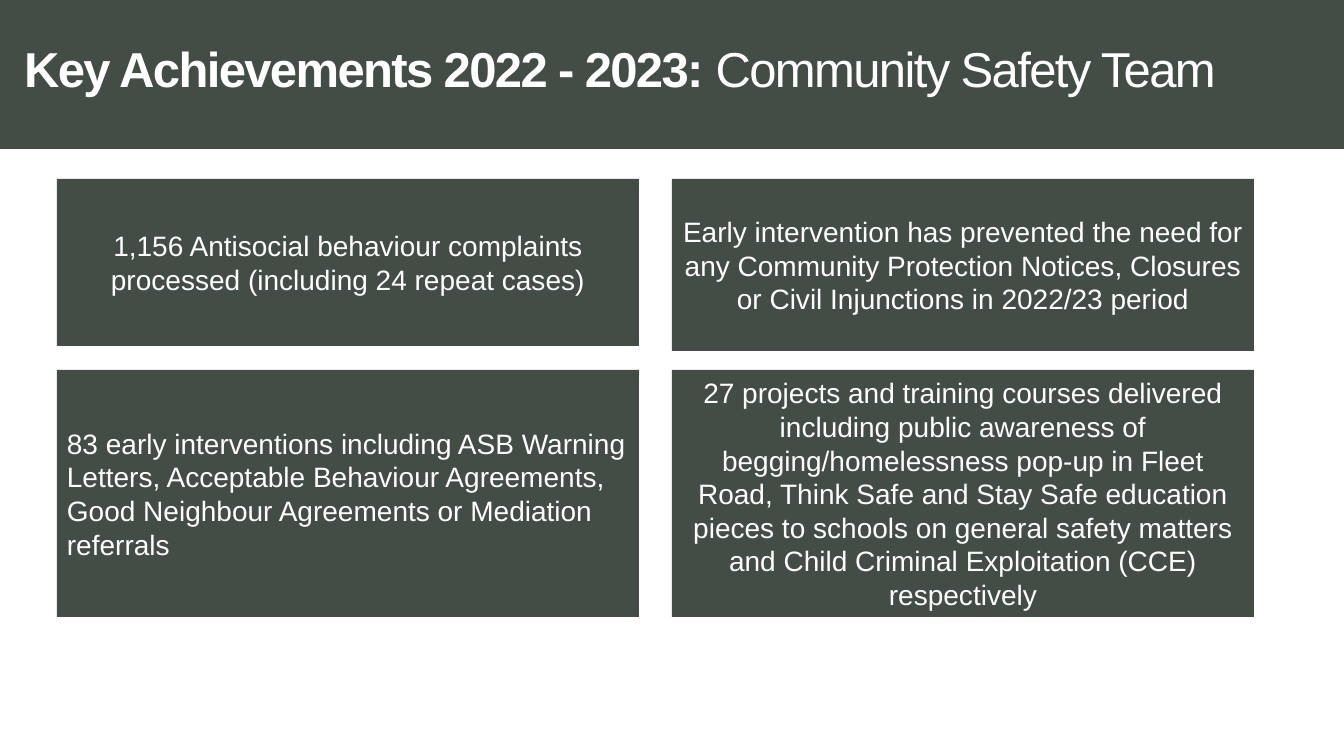
"""Build the Community Safety Team key achievements slide."""
from pptx import Presentation
from pptx.dml.color import RGBColor
from pptx.enum.shapes import MSO_SHAPE as Shape
from pptx.enum.text import MSO_ANCHOR as Anchor, MSO_AUTO_SIZE as AutoSize, PP_ALIGN as Align
from pptx.util import Pt

PX = 914400 / 100.8
WIDTH, HEIGHT = 1344, 756
GREEN, WHITE = "434D46", "FFFFFF"
TITLE_FONT = {"name": "Arial", "size": Pt(35)}
CARD_FONT = {"name": "Arial", "size": Pt(20)}

TITLE_SPANS = [
    ("Key Achievements 2022 - 2023: ", True),
    ("Community Safety Team", False),
]
COLUMN_WIDTH, COLUMN_GAP = 582, 33
CARD_ROWS = [
    (0, [
        (167, Align.CENTER,
         "1,156 Antisocial behaviour complaints processed "
         "(including 24 repeat cases)"),
        (172, Align.CENTER,
         "Early intervention has prevented the need for any Community "
         "Protection Notices, Closures or Civil Injunctions in 2022/23 period"),
    ]),
    (191, [
        (247, Align.LEFT,
         "83 early interventions including ASB Warning Letters, Acceptable "
         "Behaviour Agreements, Good Neighbour Agreements or Mediation referrals"),
        (247, Align.CENTER,
         "27 projects and training courses delivered including public awareness "
         "of begging/homelessness pop-up in Fleet Road, Think Safe and Stay Safe "
         "education pieces to schools on general safety matters and Child "
         "Criminal Exploitation (CCE) respectively"),
    ]),
]


def px(length):
    """Turn pixels into EMU."""
    return round(length * PX)


def color(code):
    """Turn a hex string into a colour."""
    return RGBColor.from_string(code)


def apply(target, values):
    """Set each named attribute on the target."""
    for name, value in values.items():
        setattr(target, name, value)


def add_span(para, text, font, bold=False):
    """Add a white run with the given font values."""
    span = para.add_run()
    span.text = text
    apply(span.font, {**font, "bold": bold})
    span.font.color.rgb = color(WHITE)
    return span


def add_panel(page, left, top, width, height):
    """Add a plain green rectangle."""
    panel = page.shapes.add_shape(Shape.RECTANGLE, px(left), px(top), px(width), px(height))
    panel.shadow.inherit = False
    panel.fill.solid()
    panel.fill.fore_color.rgb = color(GREEN)
    panel.line.fill.background()
    return panel


def add_header(page, left, top, width, height):
    """Fill the header band and set the title over it."""
    add_panel(page, left, top, width, height)
    title = page.shapes.title
    page.shapes._spTree.append(title._element)
    apply(title, {"left": px(left + 14), "top": px(top + 9),
                  "width": px(width - 22), "height": px(height - 22)})
    apply(title.text_frame, {"word_wrap": True, "auto_size": AutoSize.NONE,
                             "vertical_anchor": Anchor.MIDDLE})
    para = title.text_frame.paragraphs[0]
    apply(para, {"alignment": Align.LEFT, "line_spacing": 0.85})
    for text, bold in TITLE_SPANS:
        span = add_span(para, text, TITLE_FONT, bold)
        span._r.get_or_add_rPr().set("spc", "-120")


def add_card(page, left, top, width, height, alignment, text):
    """Add one achievement card."""
    frame = add_panel(page, left, top, width, height).text_frame
    apply(frame, {"word_wrap": True, "vertical_anchor": Anchor.MIDDLE})
    para = frame.paragraphs[0]
    para.alignment = alignment
    add_span(para, text, CARD_FONT)


def add_cards(page, left, top):
    """Lay the achievement cards out in two columns."""
    for offset, cards in CARD_ROWS:
        for column, (height, alignment, text) in enumerate(cards):
            card_left = left + column * (COLUMN_WIDTH + COLUMN_GAP)
            add_card(page, card_left, top + offset, COLUMN_WIDTH, height, alignment, text)


def main():
    """Build and save the deck."""
    deck = Presentation()
    apply(deck, {"slide_width": px(WIDTH), "slide_height": px(HEIGHT)})
    page = deck.slides.add_slide(deck.slide_layouts.get_by_name("Title Only"))
    add_header(page, 0, 0, WIDTH, 149)
    add_cards(page, 57, 179)
    deck.save("out.pptx")


if __name__ == "__main__":
    main()
